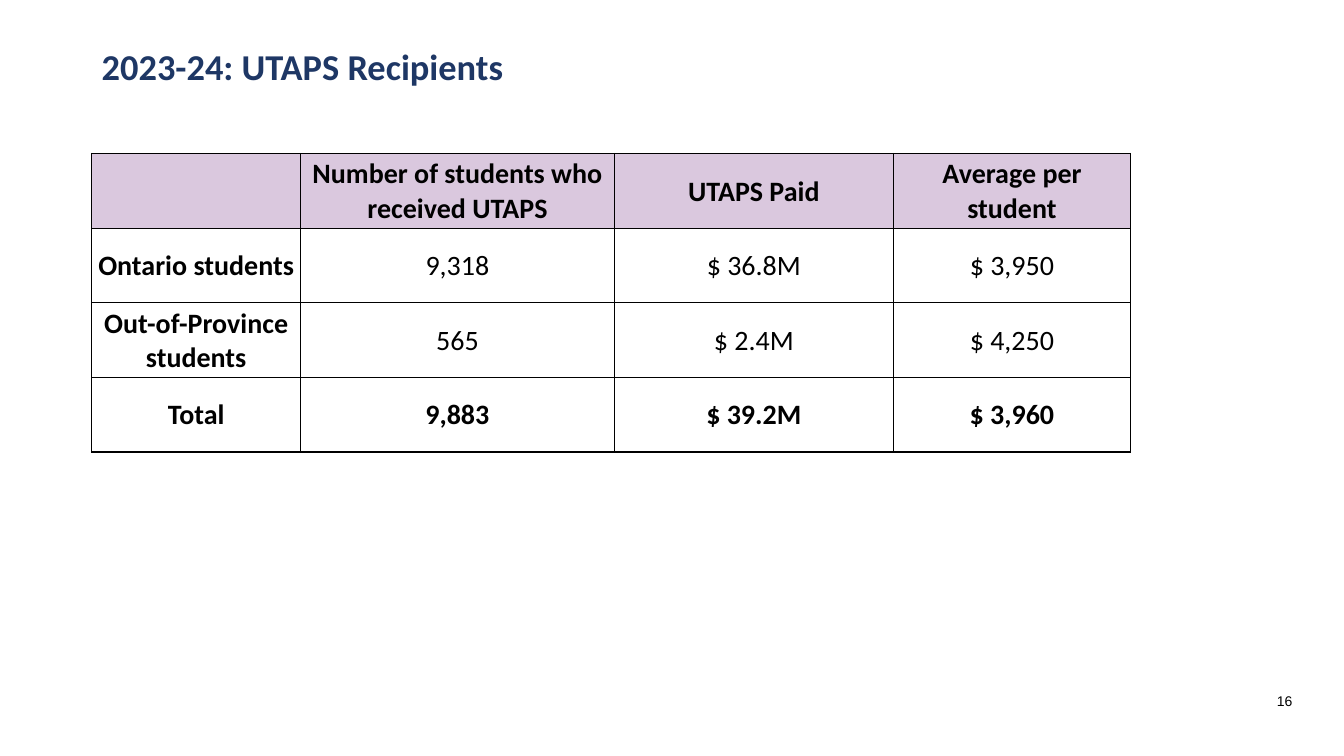
from dataclasses import dataclass

from lxml.etree import SubElement
from pptx import Presentation
from pptx.dml.color import RGBColor
from pptx.enum.text import MSO_ANCHOR, PP_ALIGN
from pptx.oxml.ns import qn
from pptx.util import Cm, Pt


@dataclass(frozen=True)
class Theme:
    navy: str = "1E3765"
    lilac: str = "DAC8DE"
    white: str = "FFFFFF"
    black: str = "000000"
    font: str = "Calibri"
    plain: str = "Arial"
    head: int = 26
    body: int = 20
    small: int = 10
    rule: int = 1


class Deck:
    def __init__(self, theme):
        self.theme = theme
        self.file = Presentation()
        self.file.slide_width = Cm(33.87)
        self.file.slide_height = Cm(19.05)
        self.slide = self.file.slides.add_slide(self.file.slide_layouts[5])

    def style(self, para, size, color, name, bold=False, align=PP_ALIGN.LEFT):
        para.alignment = align
        font = para.font
        font.size, font.name, font.bold = Pt(size), name, bold
        font.color.rgb = RGBColor.from_string(color)

    def title(self, text, left, top, width, height):
        box = self.slide.shapes.title
        box.left, box.top = Cm(left), Cm(top)
        box.width, box.height = Cm(width), Cm(height)
        frame = box.text_frame
        frame.text = text
        frame.vertical_anchor = MSO_ANCHOR.TOP
        para = frame.paragraphs[0]
        para.line_spacing = 0.9
        self.style(para, self.theme.head, self.theme.navy, self.theme.font, True)

    def number(self, text, left, top, width, height):
        box = self.slide.shapes.add_textbox(Cm(left), Cm(top), Cm(width), Cm(height))
        frame = box.text_frame
        frame.word_wrap = True
        frame.text = text
        frame.vertical_anchor = MSO_ANCHOR.MIDDLE
        self.style(frame.paragraphs[0], self.theme.small, self.theme.black,
                   self.theme.plain, align=PP_ALIGN.RIGHT)

    def border(self, cell):
        props = cell._tc.get_or_add_tcPr()
        for spot, side in enumerate(("lnL", "lnR", "lnT", "lnB")):
            line = SubElement(props, qn(f"a:{side}"), w=str(Pt(self.theme.rule)))
            fill = SubElement(line, qn("a:solidFill"))
            SubElement(fill, qn("a:srgbClr"), val=self.theme.black)
            props.insert(spot, line)

    def cell(self, cell, text, fill, bold):
        cell.text = text
        cell.vertical_anchor = MSO_ANCHOR.MIDDLE
        cell.margin_left = cell.margin_right = cell.margin_top = Cm(0.03)
        cell.margin_bottom = 0
        cell.fill.solid()
        cell.fill.fore_color.rgb = RGBColor.from_string(fill)
        self.style(cell.text_frame.paragraphs[0], self.theme.body, self.theme.black,
                   self.theme.font, bold, PP_ALIGN.CENTER)
        self.border(cell)

    def table(self, data, left, top, widths, height):
        last = len(data) - 1
        grid = self.slide.shapes.add_table(
            len(data), len(widths), Cm(left), Cm(top),
            Cm(sum(widths)), Cm(height * len(data))).table
        for col, width in zip(grid.columns, widths):
            col.width = Cm(width)
        for r, row in enumerate(data):
            grid.rows[r].height = Cm(height)
            fill = self.theme.white if r else self.theme.lilac
            for c, text in enumerate(row):
                self.cell(grid.cell(r, c), text, fill, r in (0, last) or c == 0)


def main():
    deck = Deck(Theme())
    deck.title("2023-24: UTAPS Recipients", 2.31, 1.12, 25.96, 2.74)
    deck.number("16", 30.84, 17.3, 1.98, 0.74)
    deck.table([
        ("", "Number of students who received UTAPS", "UTAPS Paid", "Average per student"),
        ("Ontario students", "9,318", "$ 36.8M", "$ 3,950"),
        ("Out-of-Province students", "565", "$ 2.4M", "$ 4,250"),
        ("Total", "9,883", "$ 39.2M", "$ 3,960"),
    ], 2.31, 3.87, (5.27, 7.9, 7.04, 5.97), 1.88)
    deck.file.save("out.pptx")


if __name__ == "__main__":
    main()
